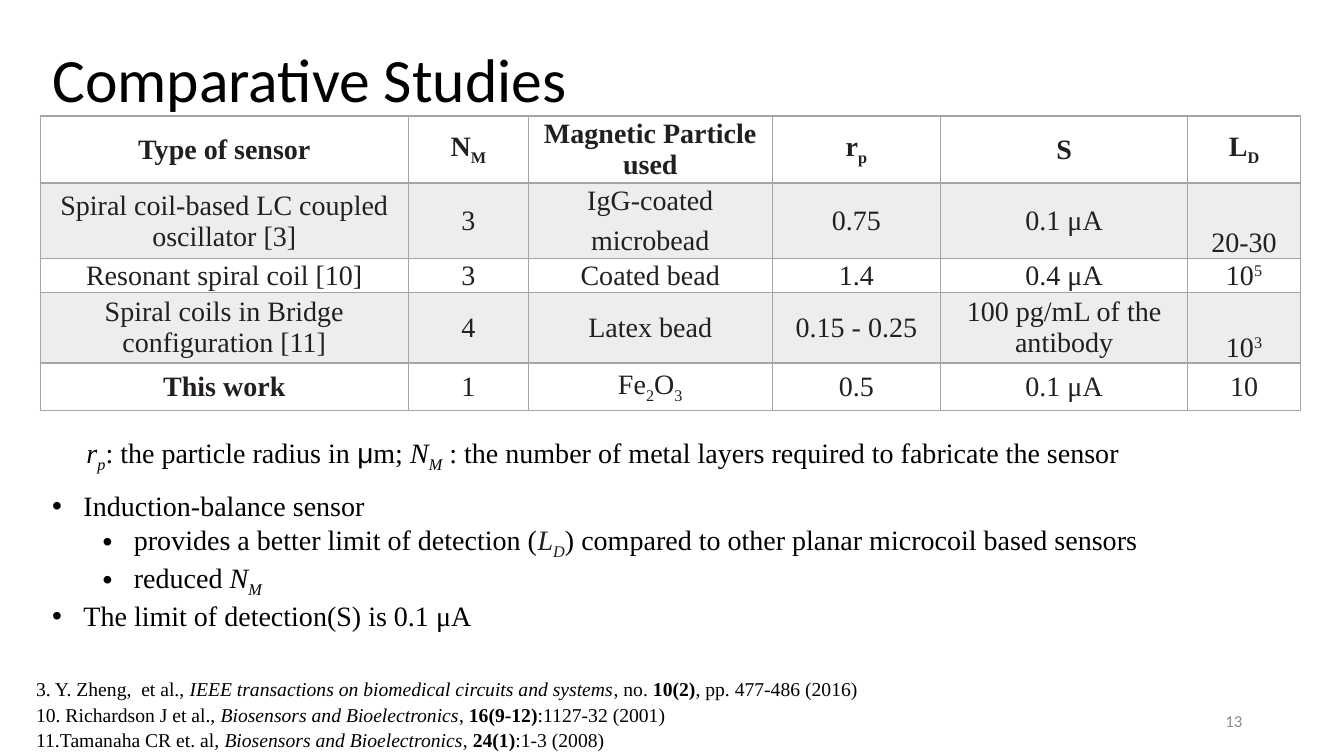
from lxml.etree import SubElement
from pptx import Presentation
from pptx.dml.color import RGBColor
from pptx.enum.text import MSO_ANCHOR, PP_ALIGN
from pptx.oxml import parse_xml
from pptx.oxml.ns import nsdecls, qn
from pptx.util import Emu, Pt

BLACK = RGBColor(0x00, 0x00, 0x00)
INK = RGBColor(0x23, 0x1F, 0x20)
GRAY = RGBColor(0xA5, 0xA5, 0xA5)
PALE = RGBColor(0x8C, 0x8C, 0x8C)
SERIF = "Times New Roman"
SANS = "Calibri"

MARKS = {
    "*": {"bold": True},
    "/": {"italic": True},
    "_": {"baseline": -25},
    "^": {"baseline": 30},
    "~": {"name": "Arial"},
    "#": {"color": INK},
}

COLUMNS = [365, 119, 242, 167, 245, 112]
ROWS = [39, 52, 23, 70, 47]
SENSORS = [
    ["*Type of sensor", "*N|*_M", "*Magnetic Particle used", "*r|*_p", "*S", "*L|*_D"],
    ["Spiral coil-based LC coupled oscillator [3]", "3", "IgG-coated\nmicrobead",
     "0.75", "0.1 μA", "20-30"],
    ["Resonant spiral coil [10]", "3", "Coated bead", "1.4", "0.4 μA", "10|^5"],
    ["Spiral coils in Bridge configuration [11]", "4", "Latex bead", "0.15 - 0.25",
     "100 pg/mL of the antibody", "10|^3"],
    ["*This work", "1", "Fe|_2|O|_3", "0.5", "0.1 μA", "10"],
]
FINDINGS = [
    (0, "Induction-balance sensor"),
    (1, "provides a better limit of detection (|#/L|#/_D|) compared to other planar "
        "microcoil based sensors"),
    (1, "reduced |/N|/_M"),
    (0, "The limit of detection(S) is 0.1 μA"),
]
LEGEND = ("/r|/_p|: the particle radius in |~μ|m; |/N|/_M"
          "| : the number of metal layers required to fabricate the sensor")
REFERENCES = "\n".join([
    "3. Y. Zheng,  et al., |/IEEE transactions on biomedical circuits and systems"
    "|, no. |*10(2)|, pp. 477-486 (2016)",
    "10. Richardson J et al., |/Biosensors and Bioelectronics|, |*16(9-12)|:1127-32 (2001)",
    "11.Tamanaha CR et. al, |/Biosensors and Bioelectronics|, |*24(1)|:1-3 (2008)",
])


def px(length):
    """Turn a length in px, 100 to the inch, into EMU."""
    return Emu(length * 9144)


class SlideWriter:
    """Hold the text style and the current slide, and add elements to it."""

    def __init__(self, page, **style):
        """Keep the page and the default font values."""
        self.page = page
        self.style = style

    def spans(self, para, markup, **style):
        """Write marked-up text, split at bars, into a paragraph."""
        for piece in markup.split("|"):
            values = {**self.style, "bold": False, "italic": False, **style}
            while piece[0] in MARKS:
                values.update(MARKS[piece[0]])
                piece = piece[1:]
            span = para.add_run()
            span.text = piece
            span.font.color.rgb = values.pop("color")
            baseline = values.pop("baseline", 0)
            if baseline:
                span._r.get_or_add_rPr().set("baseline", str(baseline * 1000))
            for name, value in values.items():
                setattr(span.font, name, value)

    def paragraphs(self, frame, text, layout, **style):
        """Write each line of the text as a paragraph with the given layout."""
        for number, line in enumerate(text.split("\n")):
            para = frame.add_paragraph() if number else frame.paragraphs[0]
            for name, value in layout.items():
                setattr(para, name, value)
            self.spans(para, line, **style)

    def text(self, place, text, anchor=MSO_ANCHOR.TOP, layout=None, **style):
        """Add a wrapping text box and return its text frame."""
        box = self.page.shapes.add_textbox(*map(px, place))
        frame = box.text_frame
        frame.word_wrap = True
        frame.vertical_anchor = anchor
        self.paragraphs(frame, text, layout or {}, **style)
        return frame

    def bullets(self, place, items):
        """Add a bulleted list of level and text pairs."""
        frame = self.text(place, "\n".join(line for level, line in items))
        for para, (level, line) in zip(frame.paragraphs, items):
            para.level = level
            properties = para._p.get_or_add_pPr()
            properties.set("marL", str(px(31 + 50 * level)))
            properties.set("indent", str(px(-31)))
            SubElement(properties, qn("a:buFont")).set("typeface", "Arial")
            SubElement(properties, qn("a:buChar")).set("char", "•")

    def borders(self, cell, bottom):
        """Draw the four cell borders, with the bottom width in points."""
        properties = cell._tc.get_or_add_tcPr()
        widths = {"lnL": 1, "lnR": 1, "lnT": 1, "lnB": bottom}
        for position, (side, width) in enumerate(widths.items()):
            properties.insert(position, parse_xml(
                f'<a:{side} {nsdecls("a")} w="{Pt(width)}"><a:solidFill>'
                f'<a:srgbClr val="{GRAY}"/></a:solidFill></a:{side}>'))

    def shade(self, cell):
        """Fill a cell with translucent gray."""
        cell.fill.solid()
        cell.fill.fore_color.rgb = GRAY
        color = cell._tc.tcPr.find(qn("a:solidFill")).find(qn("a:srgbClr"))
        SubElement(color, qn("a:alpha")).set("val", "20000")

    def table(self, place, columns, rows, content):
        """Add a table whose odd rows are shaded."""
        holder = self.page.shapes.add_table(len(rows), len(columns), *map(px, place))
        grid = holder.table
        grid.first_row = grid.horz_banding = False
        for column, width in zip(grid.columns, columns):
            column.width = px(width)
        for row, height in zip(grid.rows, rows):
            row.height = px(height)
        holder.height = px(place[3])
        layout = {"alignment": PP_ALIGN.CENTER, "space_before": Pt(3), "space_after": Pt(3)}
        for r, texts in enumerate(content):
            for c, text in enumerate(texts):
                cell = grid.cell(r, c)
                shaded = r % 2 == 1
                low = shaded and c == len(columns) - 1
                settings = {
                    "margin_left": px(7), "margin_right": px(7),
                    "margin_top": 0, "margin_bottom": 0,
                    "vertical_anchor": MSO_ANCHOR.BOTTOM if low else MSO_ANCHOR.MIDDLE,
                }
                for name, value in settings.items():
                    setattr(cell, name, value)
                if shaded:
                    self.shade(cell)
                else:
                    cell.fill.background()
                self.borders(cell, 1 if r else 2)
                self.paragraphs(cell.text_frame, text, layout, color=INK)


def main():
    """Build the slide and save it."""
    deck = Presentation()
    deck.slide_width, deck.slide_height = px(1333), px(750)
    page = deck.slides.add_slide(deck.slide_layouts[6])
    writer = SlideWriter(page, name=SERIF, size=Pt(20), color=BLACK)
    writer.text((42, 39, 1219, 86), "Comparative Studies", MSO_ANCHOR.MIDDLE,
                {"line_spacing": 0.9}, name=SANS, size=Pt(44))
    writer.table((40, 115, 1249, 297), COLUMNS, ROWS, SENSORS)
    writer.text((942, 695, 300, 40), "13", MSO_ANCHOR.MIDDLE,
                {"alignment": PP_ALIGN.RIGHT}, name=SANS, size=Pt(12), color=PALE)
    writer.bullets((42, 480, 1103, 145), FINDINGS)
    writer.text((76, 427, 1213, 44), LEGEND)
    writer.text((26, 664, 1154, 86), REFERENCES,
                layout={"alignment": PP_ALIGN.JUSTIFY, "line_spacing": 1.1}, size=Pt(14))
    deck.save("out.pptx")


if __name__ == "__main__":
    main()
